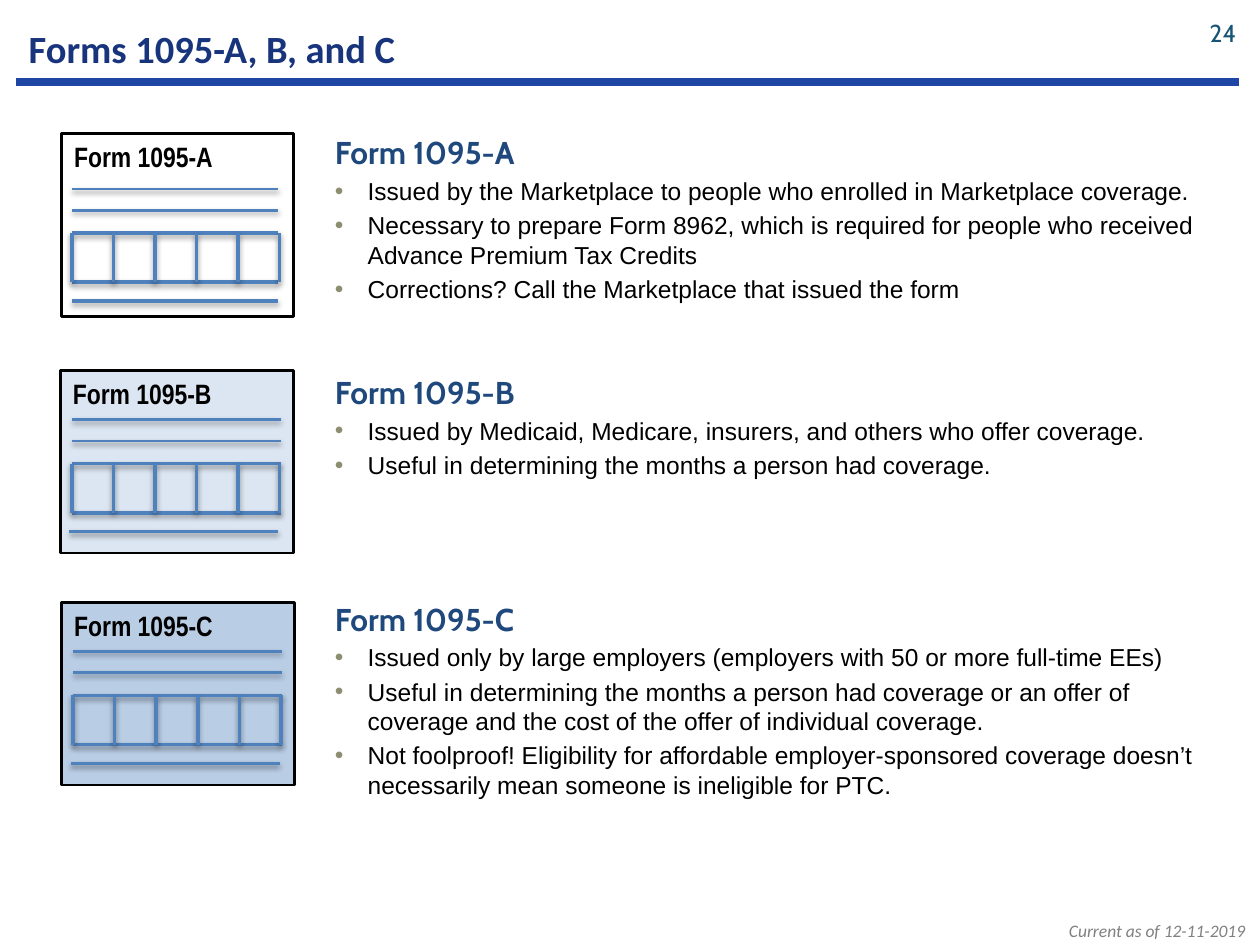
from lxml import etree
from pptx import Presentation, util as u
from pptx.dml.color import RGBColor
from pptx.enum import shapes, text
from pptx.oxml.ns import qn

# Grid: 100 columns by 75 rows, each cell a tenth of an inch
COLS, ROWS, CELL = 100, 75, u.Inches(0.1)

FORMS = [  # name, card (left, top, width), fill, ruled (left, top, width), foot shift, text rows, bullets
    ("Form 1095-A", (4.9, 10.6, 18.4), None, (5.7, 15, 16.4), 0, (10.1, 14.9), [
        "Issued by the Marketplace to people who enrolled in Marketplace coverage.",
        "Necessary to prepare Form 8962, which is required for people who received "
        "Advance Premium Tax Credits",
        "Corrections? Call the Marketplace that issued the form"]),
    ("Form 1095-B", (4.8, 29.4, 18.5), "DCE6F2", (5.7, 33.3, 16.6), -0.2, (29.1, 9.7), [
        "Issued by Medicaid, Medicare, insurers, and others who offer coverage.",
        "Useful in determining the months a person had coverage."]),
    ("Form 1095-C", (4.9, 47.8, 18.5), "B9CDE5", (5.8, 51.7, 16.6), -0.2, (47.1, 17.2), [
        "Issued only by large employers (employers with 50 or more full-time EEs)",
        "Useful in determining the months a person had coverage or an offer of "
        "coverage and the cost of the offer of individual coverage.",
        "Not foolproof! Eligibility for affordable employer-sponsored coverage doesn’t "
        "necessarily mean someone is ineligible for PTC."]),
]
HEADING = dict(size=18, name="Cabin", color="1F497D", bold=True)
BODY = dict(size=14, name="Arial", color="000000", bold=False)
CARD_TITLE = dict(size=16, name="Arial Narrow", color="000000", bold=True)
TABLE_TOP, TABLE_BOTTOM, FOOT_LINE, COLUMN = 3.5, 7.4, 8.9, 3.3


def grid(*cells):
    return [round(c * CELL) for c in cells]


def paint(color_format, hex_color):
    color_format.rgb = RGBColor.from_string(hex_color)


def write(p, content, size, color, **fmt):
    r = p.add_run()
    r.text = content
    r.font.size = u.Pt(size)
    paint(r.font.color, color)
    for key, value in fmt.items():
        setattr(r.font, key, value)


def add_text(s, box, align=text.PP_ALIGN.LEFT, anchor=text.MSO_ANCHOR.TOP):
    tf = s.shapes.add_textbox(*grid(*box)).text_frame
    tf.word_wrap, tf.vertical_anchor = True, anchor
    tf.paragraphs[0].alignment = align
    return tf


def add_bullet(p, color="8D8D72"):
    pPr = p._p.get_or_add_pPr()
    indent = u.Inches(0.26)
    pPr.set("marL", str(indent))
    pPr.set("indent", str(-indent))
    p.space_before = u.Pt(2.8)
    clr = etree.SubElement(pPr, qn("a:buClr"))
    etree.SubElement(clr, qn("a:srgbClr"), val=color)
    etree.SubElement(pPr, qn("a:buFont"), typeface="Arial")
    etree.SubElement(pPr, qn("a:buChar"), char="•")


def add_line(parent, x1, y1, x2, y2, width, color="4F81BD", shadow=True):
    line = parent.shapes.add_connector(shapes.MSO_CONNECTOR.STRAIGHT, *grid(x1, y1, x2, y2))
    line.line.width = u.Pt(width)
    paint(line.line.color, color)
    effects = etree.SubElement(line._element.spPr, qn("a:effectLst"))
    if shadow:
        outer = etree.SubElement(effects, qn("a:outerShdw"), blurRad=str(u.Pt(3.1)),
                                 dist=str(u.Pt(1.6)), dir="5400000", rotWithShape="0")
        clr = etree.SubElement(outer, qn("a:srgbClr"), val="000000")
        etree.SubElement(clr, qn("a:alpha"), val="38000")


def add_card(s, name, card, fill, ruled, foot_shift):
    group = s.shapes.add_group_shape()
    sp = group.shapes.add_shape(shapes.MSO_SHAPE.RECTANGLE, *grid(*card, 14.5))
    sp.shadow.inherit = False
    if fill:
        sp.fill.solid()
        paint(sp.fill.fore_color, fill)
    else:
        sp.fill.background()
    paint(sp.line.color, "000000")
    sp.line.width = u.Pt(1.5)
    tf = sp.text_frame
    tf.word_wrap, tf.vertical_anchor = True, text.MSO_ANCHOR.TOP
    tf.paragraphs[0].alignment = text.PP_ALIGN.LEFT
    write(tf.paragraphs[0], name, **CARD_TITLE)

    # Ruled lines, then the five-column table
    left, top, width = ruled
    for row, shift, weight in [(0, 0, 1.5), (1.7, 0, 1.5), (TABLE_TOP, 0, 2),
                               (TABLE_BOTTOM, 0, 2), (FOOT_LINE, foot_shift, 2)]:
        add_line(group, left + shift, top + row, left + shift + width, top + row, weight)
    for i in range(6):
        x = left + i * COLUMN
        add_line(group, x, top + TABLE_TOP, x, top + TABLE_BOTTOM, 2)


def add_description(s, name, top, height, bullets):
    tf = add_text(s, (25.6, top, 71.1, height))
    write(tf.paragraphs[0], name, **HEADING)
    for bullet in bullets:
        p = tf.add_paragraph()
        add_bullet(p)
        write(p, bullet, **BODY)


def main():
    prs = Presentation()
    prs.slide_width, prs.slide_height = grid(COLS, ROWS)
    s = prs.slides.add_slide(prs.slide_layouts[6])
    right, middle = text.PP_ALIGN.RIGHT, text.MSO_ANCHOR.MIDDLE

    # Footer, title rule, title and slide number
    tf = add_text(s, (59.7, 72.5, 40.1, 2.7), right)
    write(tf.paragraphs[0], "Current as of 12-11-2019", 10, "808080", name="Calibri", italic=True)
    add_line(s, 1.3, 6.5, 98.3, 6.5, 4.75, "2046A5", shadow=False)
    tf = add_text(s, (1.3, 1, 90, 5.7), anchor=middle)
    write(tf.paragraphs[0], "Forms 1095-A, B, and C", 22, "18347C", name="Calibri", bold=True)
    tf = add_text(s, (94, 0.6, 5.1, 4), right, middle)
    write(tf.paragraphs[0], "24", 14, "175475", name="Cabin")

    # One card and one description per form
    for name, card, fill, ruled, foot_shift, (top, height), bullets in FORMS:
        add_card(s, name, card, fill, ruled, foot_shift)
        add_description(s, name, top, height, bullets)

    prs.save("out.pptx")


if __name__ == "__main__":
    main()
